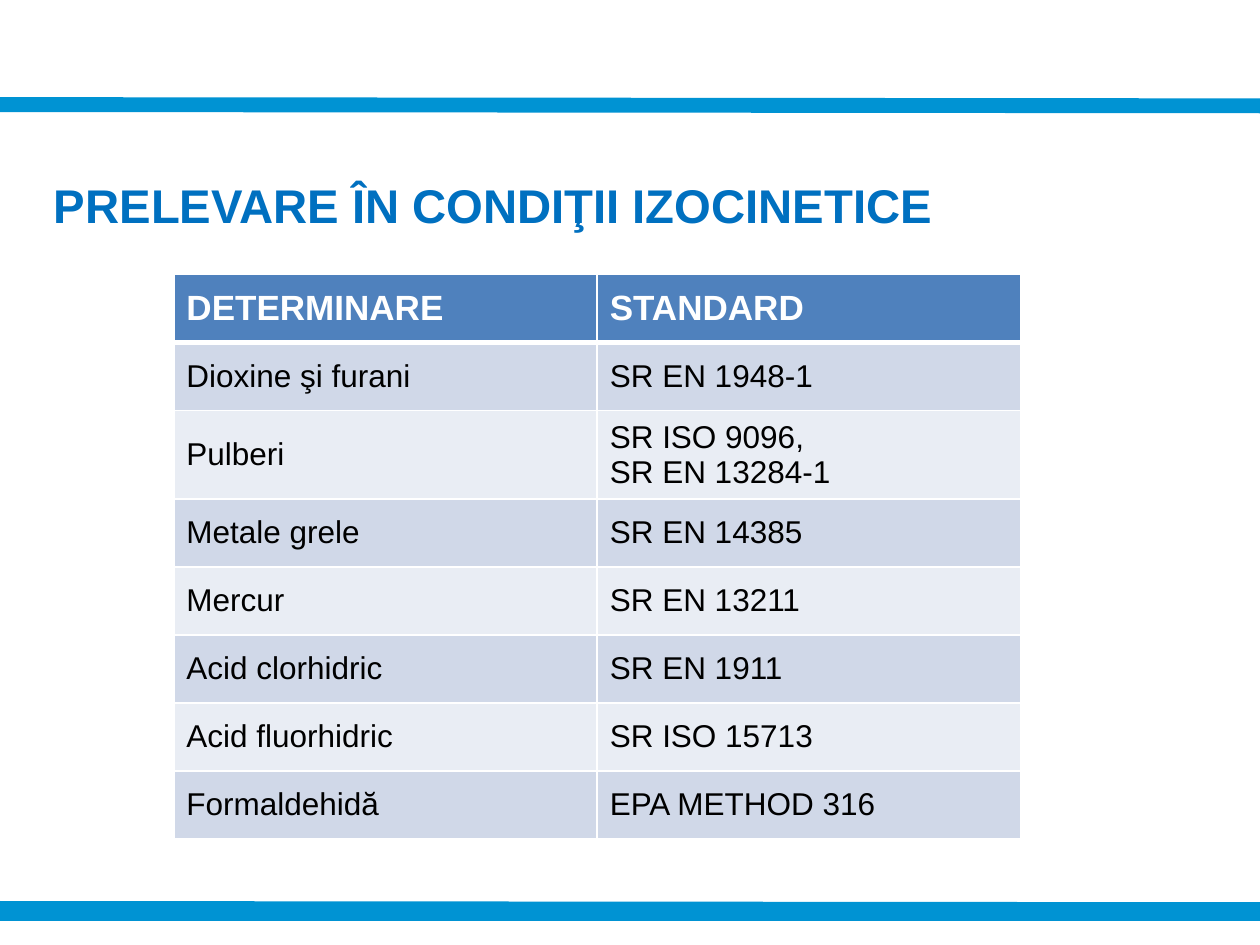
import pptx
import pptx.dml.color
import pptx.enum.shapes
import pptx.enum.text
import pptx.oxml
import pptx.oxml.ns
import pptx.util
from pptx.util import Inches

# Content
TITLE = "PRELEVARE ÎN CONDIŢII IZOCINETICE"
ROWS = [
    ("DETERMINARE", "STANDARD"),
    ("Dioxine şi furani", "SR EN 1948-1"),
    ("Pulberi", "SR ISO 9096,\nSR EN 13284-1"),
    ("Metale grele", "SR EN 14385"),
    ("Mercur", "SR EN 13211"),
    ("Acid clorhidric", "SR EN 1911"),
    ("Acid fluorhidric", "SR ISO 15713"),
    ("Formaldehidă", "EPA METHOD 316"),
]
# Start and end height of each band line
BANDS = [(7.21, 7.22), (0.83, 0.84), (7.25, 7.25)]

THEME = {
    "font": "Arial",
    "band": "0093D3", "band_width": 8.5,
    "title": "0070C0", "title_size": 27,
    "header_fill": "4F81BD", "header_text": "FFFFFF", "header_size": 20,
    "row_fills": ("D0D8E8", "E9EDF4"), "body_text": "000000", "body_size": 18,
    "border": "FFFFFF", "thin": 1, "thick": 3,
}
SLIDE_WIDTH, SLIDE_HEIGHT = 10, 7.5
TABLE_LEFT, TABLE_TOP, COLUMN_WIDTH = 1.38, 2.18, 3.36
ROW_HEIGHT, TWO_LINE_HEIGHT = 0.54, 0.67


def color(value):
    return pptx.dml.color.RGBColor.from_string(value)


def style_text(text_frame, size, text_color, bold):
    for paragraph in text_frame.paragraphs:
        for run in paragraph.runs:
            run.font.name = THEME["font"]
            run.font.size = pptx.util.Pt(size)
            run.font.bold = bold
            run.font.color.rgb = color(text_color)


def add_band(slide, start, end):
    line = slide.shapes.add_connector(
        pptx.enum.shapes.MSO_CONNECTOR.STRAIGHT,
        Inches(0), Inches(start), Inches(SLIDE_WIDTH), Inches(end))
    line.line.color.rgb = color(THEME["band"])
    line.line.width = pptx.util.Pt(THEME["band_width"])
    line._element.spPr.append(pptx.oxml.parse_xml(
        f'<a:effectLst {pptx.oxml.ns.nsdecls("a")}/>'))


def set_borders(cell, top, bottom):
    widths = {"lnL": THEME["thin"], "lnR": THEME["thin"], "lnT": top, "lnB": bottom}
    properties = cell._tc.get_or_add_tcPr()
    for position, (side, width) in enumerate(widths.items()):
        properties.insert(position, pptx.oxml.parse_xml(
            f'<a:{side} {pptx.oxml.ns.nsdecls("a")} w="{pptx.util.Pt(width)}">'
            f'<a:solidFill><a:srgbClr val="{THEME["border"]}"/></a:solidFill>'
            f'</a:{side}>'))


def add_title(slide):
    box = slide.shapes.add_textbox(Inches(0.33), Inches(1.35), Inches(9.33), Inches(0.55))
    box.text_frame.word_wrap = True
    box.text_frame.text = TITLE
    style_text(box.text_frame, THEME["title_size"], THEME["title"], True)


def add_standards_table(slide):
    heights = [TWO_LINE_HEIGHT if "\n" in row[1] else ROW_HEIGHT for row in ROWS]
    columns = len(ROWS[0])
    table = slide.shapes.add_table(
        len(ROWS), columns, Inches(TABLE_LEFT), Inches(TABLE_TOP),
        Inches(COLUMN_WIDTH * columns), Inches(sum(heights))).table
    for column in table.columns:
        column.width = Inches(COLUMN_WIDTH)
    for row_index, (row, height) in enumerate(zip(ROWS, heights)):
        table.rows[row_index].height = Inches(height)
        header = row_index == 0
        kind = "header" if header else "body"
        fill = THEME["header_fill"] if header else THEME["row_fills"][(row_index - 1) % 2]
        for column_index, text in enumerate(row):
            cell = table.cell(row_index, column_index)
            cell.text_frame.text = text
            cell.vertical_anchor = pptx.enum.text.MSO_ANCHOR.MIDDLE
            cell.fill.solid()
            cell.fill.fore_color.rgb = color(fill)
            style_text(cell.text_frame, THEME[f"{kind}_size"], THEME[f"{kind}_text"], header)
            set_borders(cell,
                        top=THEME["thick"] if row_index == 1 else THEME["thin"],
                        bottom=THEME["thick"] if header else THEME["thin"])


def main():
    presentation = pptx.Presentation()
    presentation.slide_width = Inches(SLIDE_WIDTH)
    presentation.slide_height = Inches(SLIDE_HEIGHT)
    slide = presentation.slides.add_slide(presentation.slide_layouts[6])
    for start, end in BANDS:
        add_band(slide, start, end)
    add_title(slide)
    add_standards_table(slide)
    presentation.save("out.pptx")


if __name__ == "__main__":
    main()
